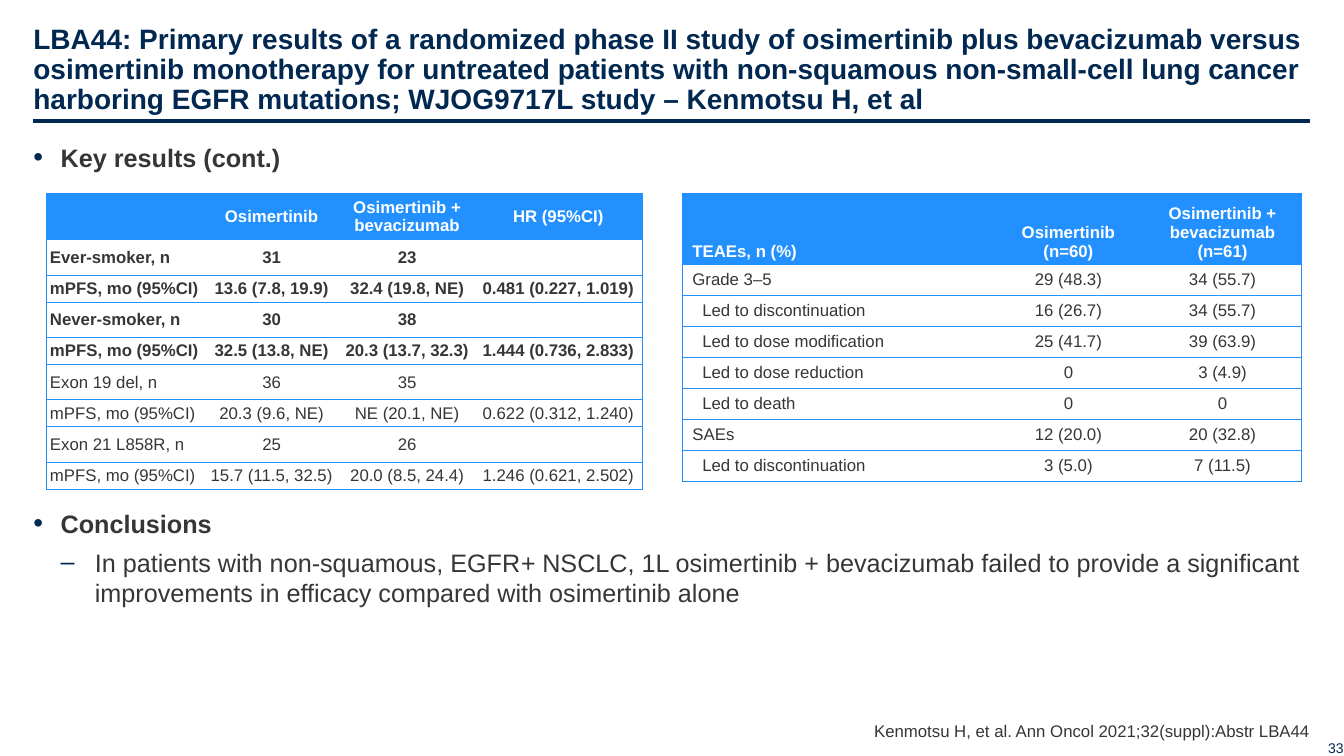
"""Build the WJOG9717L results slide with subgroup and adverse event tables."""
from dataclasses import dataclass

from lxml.etree import SubElement
from pptx import Presentation
from pptx.dml.color import RGBColor
from pptx.enum.shapes import MSO_CONNECTOR
from pptx.enum.text import MSO_ANCHOR as Anchor, MSO_AUTO_SIZE, PP_ALIGN as Align
from pptx.oxml.ns import qn
from pptx.slide import Slide
from pptx.table import _Cell as Cell
from pptx.text.text import TextFrame, _Paragraph as Paragraph
from pptx.util import Cm, Pt

NAVY = RGBColor(0x00, 0x28, 0x50)
GREY = RGBColor(0x36, 0x36, 0x36)
BLUE = RGBColor(0x22, 0x91, 0xFF)
WHITE = RGBColor(0xFF, 0xFF, 0xFF)
FONT = "Arial"
TIGHT = 0.09


@dataclass(frozen=True)
class Row:
    cells: tuple[str, ...]
    bold: bool = False
    indent: float = 0


@dataclass(frozen=True)
class ResultTable:
    left: float
    widths: tuple[float, ...]
    header_height: float
    row_height: float
    header_anchor: Anchor
    label_margin: float
    header: tuple[str, ...]
    rows: tuple[Row, ...]


@dataclass(frozen=True)
class Bullet:
    mark: str
    text_left: float
    hanging: float
    mark_percent: int


TOPIC = Bullet("•", 0.69, 0.69, 110)
POINT = Bullet("–", 1.55, 0.86, 100)

SUBGROUPS = ResultTable(
    1.17, (3.96, 3.43, 3.4, 4.22), 1.16, 0.68, Anchor.MIDDLE, TIGHT,
    ("", "Osimertinib", "Osimertinib + bevacizumab", "HR (95%CI)"),
    (
        Row(("Ever-smoker, n", "31", "23", ""), bold=True),
        Row(("mPFS, mo (95%CI)", "13.6 (7.8, 19.9)", "32.4 (19.8, NE)", "0.481 (0.227, 1.019)"), bold=True),
        Row(("Never-smoker, n", "30", "38", ""), bold=True),
        Row(("mPFS, mo (95%CI)", "32.5 (13.8, NE)", "20.3 (13.7, 32.3)", "1.444 (0.736, 2.833)"), bold=True),
        Row(("Exon 19 del, n", "36", "35", "")),
        Row(("mPFS, mo (95%CI)", "20.3 (9.6, NE)", "NE (20.1, NE)", "0.622 (0.312, 1.240)")),
        Row(("Exon 21 L858R, n", "25", "26", "")),
        Row(("mPFS, mo (95%CI)", "15.7 (11.5, 32.5)", "20.0 (8.5, 24.4)", "1.246 (0.621, 2.502)")),
    ),
)
ADVERSE_EVENTS = ResultTable(
    17.2, (7.82, 3.81, 3.96), 1.78, 0.78, Anchor.BOTTOM, 0.25,
    ("TEAEs, n (%)", "Osimertinib\n(n=60)", "Osimertinib + bevacizumab (n=61)"),
    (
        Row(("Grade 3–5", "29 (48.3)", "34 (55.7)")),
        Row(("Led to discontinuation", "16 (26.7)", "34 (55.7)"), indent=0.25),
        Row(("Led to dose modification", "25 (41.7)", "39 (63.9)"), indent=0.25),
        Row(("Led to dose reduction", "0", "3 (4.9)"), indent=0.25),
        Row(("Led to death", "0", "0"), indent=0.25),
        Row(("SAEs", "12 (20.0)", "20 (32.8)")),
        Row(("Led to discontinuation", "3 (5.0)", "7 (11.5)"), indent=0.25),
    ),
)


def write(paragraph: Paragraph, text: str, *, size: float = 12, color: RGBColor = GREY,
          bold: bool = False, italic: bool = False, align: Align = Align.LEFT) -> None:
    """Append formatted text to a paragraph, breaking at newlines."""
    paragraph.alignment = align
    for index, line in enumerate(text.split("\n")):
        if index:
            paragraph.add_line_break()
        run = paragraph.add_run()
        run.text = line
        run.font.name, run.font.size = FONT, Pt(size)
        run.font.bold, run.font.italic = bold, italic
        run.font.color.rgb = color


def set_frame(frame: TextFrame, anchor: Anchor, top: float = 0, bottom: float = 0) -> None:
    """Give a text frame wrapping, no side margins and a fixed size."""
    frame.word_wrap, frame.auto_size = True, MSO_AUTO_SIZE.NONE
    frame.vertical_anchor = anchor
    frame.margin_left = frame.margin_right = 0
    frame.margin_top, frame.margin_bottom = Cm(top), Cm(bottom)


def add_text_box(slide: Slide, left: float, top: float, width: float, height: float,
                 anchor: Anchor, margin: float = 0) -> TextFrame:
    """Add an empty text box and return its frame."""
    frame = slide.shapes.add_textbox(Cm(left), Cm(top), Cm(width), Cm(height)).text_frame
    set_frame(frame, anchor, margin, margin)
    return frame


def set_bullet(paragraph: Paragraph, bullet: Bullet) -> None:
    """Give a paragraph a navy bullet and a hanging indent."""
    paragraph.space_after = Pt(6)
    properties = paragraph._p.get_or_add_pPr()
    properties.set("marL", str(Cm(bullet.text_left)))
    properties.set("indent", str(-Cm(bullet.hanging)))
    SubElement(SubElement(properties, qn("a:buClr")), qn("a:srgbClr"), val=str(NAVY))
    SubElement(properties, qn("a:buSzPct"), val=str(bullet.mark_percent * 1000))
    SubElement(properties, qn("a:buFont"), typeface=FONT)
    SubElement(properties, qn("a:buChar"), char=bullet.mark)


def set_borders(cell: Cell, first: bool, last: bool) -> None:
    """Draw horizontal rules and the outer vertical edges of a row."""
    sides = {"a:lnL": first, "a:lnR": last, "a:lnT": True, "a:lnB": True}
    for side, visible in sides.items():
        line = SubElement(cell._tc.get_or_add_tcPr(), qn(side), w=str(Pt(0.75)))
        if visible:
            SubElement(SubElement(line, qn("a:solidFill")), qn("a:srgbClr"), val=str(BLUE))
        else:
            SubElement(line, qn("a:noFill"))


def add_result_table(slide: Slide, content: ResultTable) -> None:
    """Add a table with a blue header and ruled rows."""
    rows = (Row(content.header, bold=True), *content.rows)
    heights = [content.header_height] + [content.row_height] * len(content.rows)
    table = slide.shapes.add_table(
        len(rows), len(content.widths), Cm(content.left), Cm(4.88),
        Cm(sum(content.widths)), Cm(sum(heights))).table
    table.horz_banding = False
    for column, width in zip(table.columns, content.widths):
        column.width = Cm(width)
    for row_index, (row, height) in enumerate(zip(rows, heights)):
        table.rows[row_index].height = Cm(height)
        is_header = row_index == 0
        for column_index, text in enumerate(row.cells):
            cell = table.cell(row_index, column_index)
            is_label = column_index == 0
            set_borders(cell, is_label, column_index == len(row.cells) - 1)
            cell.fill.solid()
            cell.fill.fore_color.rgb = BLUE if is_header else WHITE
            cell.vertical_anchor = content.header_anchor if is_header else Anchor.MIDDLE
            cell.margin_top = cell.margin_bottom = cell.margin_right = Cm(TIGHT)
            cell.margin_left = Cm(content.label_margin + row.indent if is_label else TIGHT)
            write(cell.text_frame.paragraphs[0], text, bold=row.bold,
                  color=WHITE if is_header else GREY,
                  align=Align.LEFT if is_label else Align.CENTER)


def main() -> None:
    """Assemble the slide and save the presentation."""
    deck = Presentation()
    deck.slide_width, deck.slide_height = Cm(33.87), Cm(19.05)
    slide = deck.slides.add_slide(deck.slide_layouts[5])

    title = slide.shapes.title
    title.left, title.top, title.width, title.height = Cm(0.84), Cm(0.3), Cm(32.18), Cm(2.62)
    set_frame(title.text_frame, Anchor.BOTTOM, top=0.13)
    heading = title.text_frame.paragraphs[0]
    heading.line_spacing = 0.9
    write(heading, "LBA44: Primary results of a randomized phase II study of osimertinib plus "
          "bevacizumab versus osimertinib monotherapy for untreated patients with non-squamous "
          "non-small-cell lung cancer harboring EGFR mutations; WJOG9717L study – Kenmotsu H, et al",
          size=20, color=NAVY, bold=True)

    rule = slide.shapes.add_connector(MSO_CONNECTOR.STRAIGHT, Cm(0.84), Cm(3.05), Cm(33.02), Cm(3.05))
    rule.line.color.rgb, rule.line.width = NAVY, Pt(2.25)
    SubElement(rule._element.spPr, qn("a:effectLst"))

    body = add_text_box(slide, 0.84, 3.45, 32.18, 14.05, Anchor.TOP, margin=0.13)
    key_results, conclusions, finding = body.paragraphs[0], body.add_paragraph(), body.add_paragraph()
    conclusions.space_before = Pt(234)
    finding.level = 1
    for paragraph, bullet in ((key_results, TOPIC), (conclusions, TOPIC), (finding, POINT)):
        set_bullet(paragraph, bullet)
    write(key_results, "Key results (cont.)", size=18, bold=True)
    write(conclusions, "Conclusions", size=18, bold=True)
    write(finding, "In patients with non-squamous, EGFR", size=18)
    write(finding, "+", size=18, italic=True)
    write(finding, " NSCLC, 1L osimertinib + bevacizumab failed to provide a significant "
          "improvements in efficacy compared with osimertinib alone", size=18)

    for content in (ADVERSE_EVENTS, SUBGROUPS):
        add_result_table(slide, content)

    citation = add_text_box(slide, 17.73, 18.11, 15.29, 0.56, Anchor.BOTTOM)
    write(citation.paragraphs[0], "Kenmotsu H, et al. Ann Oncol 2021;32(suppl):Abstr LBA44",
          align=Align.RIGHT)
    page_number = add_text_box(slide, 32.21, 18.03, 1.65, 1.02, Anchor.BOTTOM)
    write(page_number.paragraphs[0], "33", size=10, color=NAVY, align=Align.RIGHT)
    deck.save("out.pptx")


if __name__ == "__main__":
    main()
